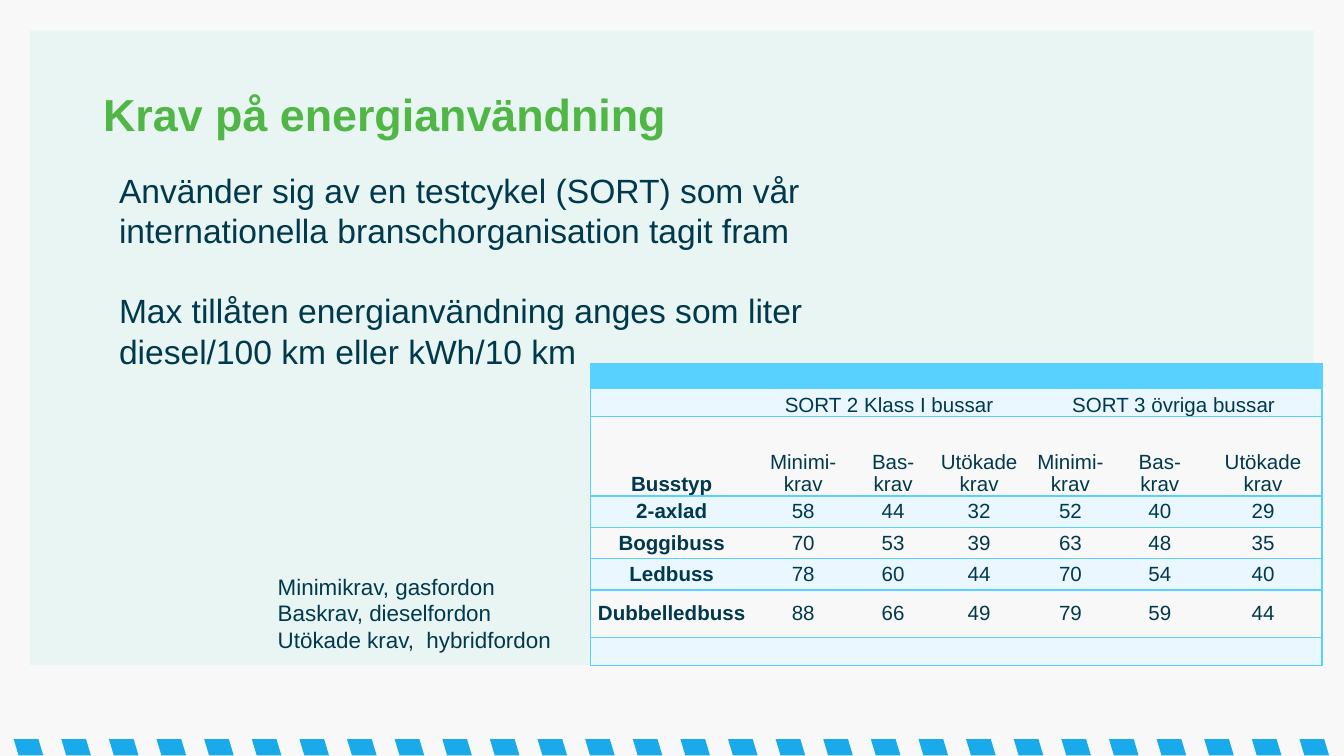
from lxml.etree import SubElement
from pptx import Presentation
from pptx.dml.color import RGBColor
from pptx.enum.shapes import MSO_SHAPE
from pptx.enum.text import MSO_ANCHOR, PP_ALIGN
from pptx.oxml.ns import qn
from pptx.util import Cm, Pt

HUES = {"back": "F8F8F8", "panel": "E8F5F2", "stripe": "19AAEB",
        "title": "50B746", "ink": "00394D", "line": "59D1FF", "band": "EAF7FF"}


def hue(name):
    return RGBColor.from_string(HUES[name])


def write(para, text, size, name="ink", bold=False):
    run = para.add_run()
    run.text = text
    run.font.name = "Arial"
    run.font.size = Pt(size)
    run.font.bold = bold
    run.font.color.rgb = hue(name)


deck = Presentation()
deck.slide_width, deck.slide_height = Cm(25.4), Cm(14.29)
slide = deck.slides.add_slide(deck.slide_layouts[6])
slide.background.fill.solid()
slide.background.fill.fore_color.rgb = hue("back")

forms = [(MSO_SHAPE.PARALLELOGRAM, 0.26 + 0.9 * i, 13.97, 0.56, 0.31, "stripe")
         for i in range(28)]
forms.append((MSO_SHAPE.RECTANGLE, 0.57, 0.58, 24.26, 11.99, "panel"))
for kind, left, top, width, height, name in forms:
    shape = slide.shapes.add_shape(kind, Cm(left), Cm(top), Cm(width), Cm(height))
    shape.shadow.inherit = False
    shape.fill.solid()
    shape.fill.fore_color.rgb = hue(name)
    shape.line.fill.background()
    if name == "stripe":
        shape.adjustments[0] = 0.3
        shape._element.spPr.find(qn("a:xfrm")).set("flipH", "1")

title = slide.shapes.add_textbox(Cm(1.95), Cm(1.61), Cm(21.41), Cm(1.09))
frame = title.text_frame
frame.word_wrap = True
frame.vertical_anchor = MSO_ANCHOR.MIDDLE
frame.margin_left = frame.margin_right = frame.margin_top = frame.margin_bottom = 0
write(frame.paragraphs[0], "Krav på energianvändning", 24, "title", True)

wide = [3.07, 1.9, 1.5, 1.75, 1.7, 1.68, 2.22]
high = [0.47, 0.53, 1.51, 0.59, 0.59, 0.59, 0.9, 0.53]
heads = ["Minimi-krav", "Bas-krav", "Utökade krav"]
rows = [
    [""] * 7,
    ["", "SORT 2 Klass I bussar", "", "", "SORT 3 övriga bussar", "", ""],
    ["Busstyp"] + heads * 2,
    ["2-axlad", "58", "44", "32", "52", "40", "29"],
    ["Boggibuss", "70", "53", "39", "63", "48", "35"],
    ["Ledbuss", "78", "60", "44", "70", "54", "40"],
    ["Dubbelledbuss", "88", "66", "49", "79", "59", "44"],
    [""] * 7,
]
holder = slide.shapes.add_table(8, 7, Cm(11.16), Cm(6.87), Cm(sum(wide)), Cm(sum(high)))
table = holder.table
style = holder._element.find(".//" + qn("a:tableStyleId"))
style.text = "{2D5ABB26-0587-4C30-8999-92F81FD0307C}"
for col, width in zip(table.columns, wide):
    col.width = Cm(width)
for row, height in zip(table.rows, high):
    row.height = Cm(height)
for start in (1, 4):
    table.cell(1, start).merge(table.cell(1, start + 2))

for r, texts in enumerate(rows):
    for c, text in enumerate(texts):
        cell = table.cell(r, c)
        cell.margin_left = cell.margin_right = Cm(0.1)
        cell.margin_top = cell.margin_bottom = 0
        cell.vertical_anchor = MSO_ANCHOR.MIDDLE if r > 2 else MSO_ANCHOR.BOTTOM
        para = cell.text_frame.paragraphs[0]
        para.alignment = PP_ALIGN.CENTER
        if text:
            para.space_after = Pt(2 if r > 2 else 7.2)
            write(para, text, 11, bold=c == 0)
        else:
            SubElement(para._p, qn("a:endParaRPr"), sz="1100")
        cell.fill.solid()
        cell.fill.fore_color.rgb = hue("line" if r == 0 else "band" if r % 2 else "back")
        sides = ["lnT", "lnB"]
        if c == 6 or (r, c) == (1, 4):
            sides.insert(0, "lnR")
        if c == 0:
            sides.insert(0, "lnL")
        props = cell._tc.get_or_add_tcPr()
        for spot, side in enumerate(sides):
            line = SubElement(props, qn("a:" + side), w="12700")
            paint = SubElement(line, qn("a:solidFill"))
            SubElement(paint, qn("a:srgbClr"), val=HUES["line"])
            props.insert(spot, line)

notes = [
    (2, 3.08, 15.98, 4.88, 18, 21.5, [
        "Använder sig av en testcykel (SORT) som vår internationella branschorganisation tagit fram",
        "Max tillåten energianvändning anges som liter diesel/100 km eller kWh/10 km"]),
    (5, 10.7, 9.09, 1.8, 12, 0, [
        "Minimikrav, gasfordon", "Baskrav, dieselfordon", "Utökade krav,  hybridfordon"]),
]
for left, top, width, height, size, gap, lines in notes:
    box = slide.shapes.add_textbox(Cm(left), Cm(top), Cm(width), Cm(height))
    frame = box.text_frame
    frame.word_wrap = True
    for i, text in enumerate(lines):
        para = frame.add_paragraph() if i else frame.paragraphs[0]
        if i and gap:
            para.space_before = Pt(gap)
        write(para, text, size)

deck.save("out.pptx")
